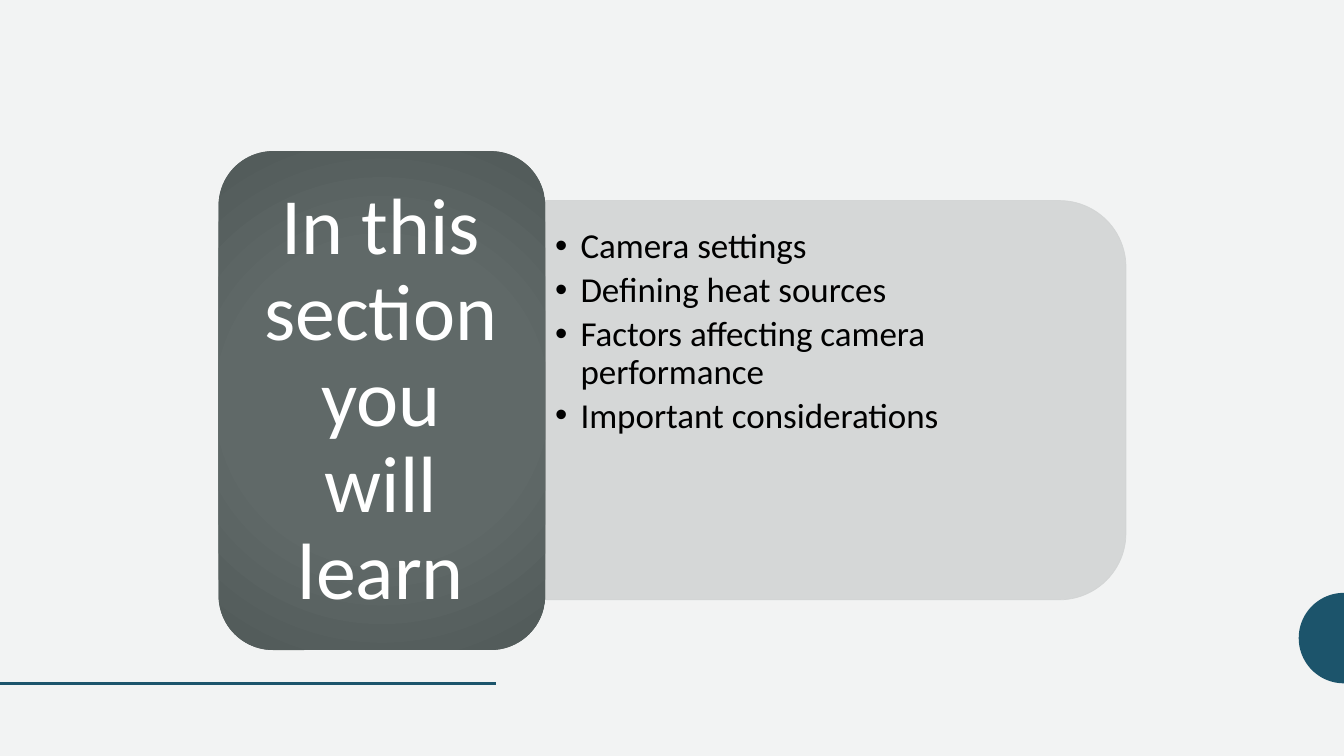
import math

import lxml.etree
import pptx
import pptx.dml.color
import pptx.enum.shapes
import pptx.enum.text
import pptx.oxml.ns
import pptx.util

Cm = pptx.util.Cm
Pt = pptx.util.Pt
SHAPES = pptx.enum.shapes.MSO_SHAPE
ANCHORS = pptx.enum.text.MSO_ANCHOR
ALIGNMENTS = pptx.enum.text.PP_ALIGN
qn = pptx.oxml.ns.qn

SLIDE_WIDTH, SLIDE_HEIGHT = 33.87, 19.05
ACCENT = "1C546B"
PANEL_GREY = "D2D4D4"
CARD_STOPS = [(0, "626B6A"), (50, "606968"), (100, "515A59")]
HEADING = "In this section you will learn"
TOPICS = [
    "Camera settings",
    "Defining heat sources",
    "Factors affecting camera performance",
    "Important considerations",
]


def colour(hex_code):
    return pptx.dml.color.RGBColor.from_string(hex_code)


def apply_format(target, values):
    for name, value in values.items():
        setattr(target, name, value)


def set_alpha(fill_parent, percent):
    for srgb in fill_parent.iter(qn("a:srgbClr")):
        lxml.etree.SubElement(srgb, qn("a:alpha"), val=str(percent * 1000))


def add_panel(slide):
    """Pale panel, turned so that its rounded end points right."""
    panel = slide.shapes.add_shape(
        SHAPES.ROUND_2_SAME_RECTANGLE, Cm(16.03), Cm(2.77), Cm(10.06), Cm(14.63))
    panel.rotation = 90
    panel.shadow.inherit = False
    panel.fill.solid()
    panel.fill.fore_color.rgb = colour(PANEL_GREY)
    panel.line.color.rgb = colour(PANEL_GREY)
    panel.line.width = Pt(0.5)
    set_alpha(panel._element.spPr, 90)


def add_card(slide):
    """Dark card with a radial gradient."""
    card = slide.shapes.add_shape(
        SHAPES.ROUNDED_RECTANGLE, Cm(5.51), Cm(3.81), Cm(8.23), Cm(12.57))
    card.shadow.inherit = False
    card.line.fill.background()
    card.fill.background()
    properties = card._element.spPr
    no_fill = properties.find(qn("a:noFill"))
    gradient = lxml.etree.Element(qn("a:gradFill"), rotWithShape="1")
    stops = lxml.etree.SubElement(gradient, qn("a:gsLst"))
    for position, hex_code in CARD_STOPS:
        stop = lxml.etree.SubElement(stops, qn("a:gs"), pos=str(position * 1000))
        lxml.etree.SubElement(stop, qn("a:srgbClr"), val=hex_code)
    circle = lxml.etree.SubElement(gradient, qn("a:path"), {"path": "circle"})
    lxml.etree.SubElement(
        circle, qn("a:fillToRect"), dict.fromkeys("ltrb", "100000"))
    properties.replace(no_fill, gradient)


def add_half_disc(slide, radius, centre_y, steps=48):
    """Half disc resting on the right edge of the slide."""
    angles = [math.pi * (0.5 + step / steps) for step in range(steps + 1)]
    points = [(Cm(SLIDE_WIDTH + radius * math.cos(angle)),
               Cm(centre_y - radius * math.sin(angle))) for angle in angles]
    builder = slide.shapes.build_freeform(*points[0])
    builder.add_line_segments(points[1:], close=True)
    half_disc = builder.convert_to_shape()
    half_disc.shadow.inherit = False
    half_disc.fill.solid()
    half_disc.fill.fore_color.rgb = colour(ACCENT)
    half_disc.line.fill.background()


def add_rule(slide, y, length):
    rule = slide.shapes.add_connector(
        pptx.enum.shapes.MSO_CONNECTOR.STRAIGHT, 0, Cm(y), Cm(length), Cm(y))
    rule.line.color.rgb = colour(ACCENT)
    rule.line.width = Pt(2)
    lxml.etree.SubElement(rule._element.spPr, qn("a:effectLst"))


def fill_placeholder(slide, holder, texts, box, frame_format,
                     paragraph_format, size, hex_code):
    """Move a placeholder to the front, then write and format its paragraphs."""
    slide.shapes._spTree.append(holder._element)
    apply_format(holder, dict(zip(("left", "top", "width", "height"), map(Cm, box))))
    frame = holder.text_frame
    frame.text = "\n".join(texts)
    apply_format(frame, {
        "word_wrap": True,
        "auto_size": pptx.enum.text.MSO_AUTO_SIZE.NONE,
        **frame_format,
    })
    for paragraph in frame.paragraphs:
        apply_format(paragraph, {
            "line_spacing": 0.9, "space_before": Pt(0), **paragraph_format})
        apply_format(paragraph.font, {"name": "Calibri", "size": Pt(size)})
        for run in paragraph.runs:
            apply_format(run.font, {"name": "Calibri", "size": Pt(size)})
            run.font.color.rgb = colour(hex_code)


def set_bullet_indent(holder, indent):
    for paragraph in holder.text_frame.paragraphs:
        properties = paragraph._p.get_or_add_pPr()
        properties.set("marL", str(Cm(indent)))
        properties.set("indent", str(-Cm(indent)))


def main():
    deck = pptx.Presentation()
    deck.slide_width, deck.slide_height = Cm(SLIDE_WIDTH), Cm(SLIDE_HEIGHT)
    slide = deck.slides.add_slide(deck.slide_layouts[1])
    heading, topics = slide.placeholders

    # Background and edge decoration
    slide.background.fill.solid()
    slide.background.fill.fore_color.rgb = colour("F2F3F3")
    add_half_disc(slide, radius=1.14, centre_y=16.08)
    add_rule(slide, y=17.22, length=12.5)

    # Topics on the pale panel
    add_panel(slide)
    fill_placeholder(
        slide, topics, TOPICS, (13.74, 5.56, 14.15, 9.07),
        {"vertical_anchor": ANCHORS.TOP, "margin_left": Cm(0.25),
         "margin_right": Cm(0.25), "margin_top": Cm(0.2)},
        {"alignment": ALIGNMENTS.LEFT, "space_after": Pt(4.3)}, 25, "000000")
    set_bullet_indent(topics, 0.64)

    # Heading on the dark card
    add_card(slide)
    fill_placeholder(
        slide, heading, [HEADING], (5.89, 4.22, 7.42, 11.76),
        {"vertical_anchor": ANCHORS.MIDDLE, "margin_left": Cm(0.62),
         "margin_right": Cm(0.62), "margin_top": Cm(0.3), "margin_bottom": Cm(0.3)},
        {"alignment": ALIGNMENTS.CENTER}, 57, "FFFFFF")

    deck.save("out.pptx")


if __name__ == "__main__":
    main()
